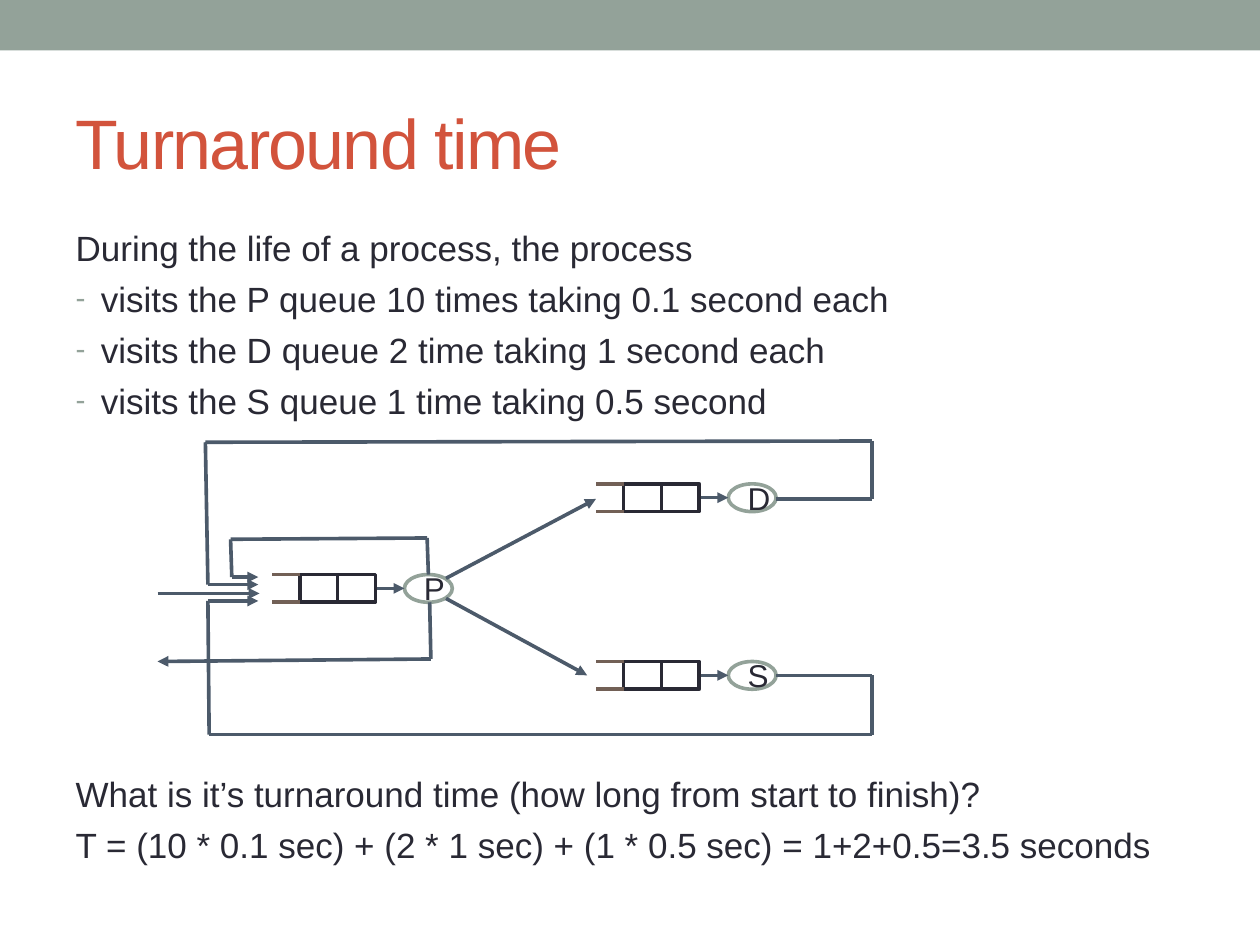
from lxml import etree
from pptx import Presentation
from pptx.dml.color import RGBColor
from pptx.enum.shapes import MSO_CONNECTOR, MSO_SHAPE
from pptx.enum.text import MSO_ANCHOR, MSO_AUTO_SIZE, PP_ALIGN
from pptx.oxml.ns import qn
from pptx.util import Inches, Pt

COLORS = {
    "sage": "93A299",
    "title": "D2533C",
    "ink": "292934",
    "white": "FFFFFF",
    "brown": "726056",
    "slate": "4C5A6A",
}
LINE_WIDTH = Pt(2.08)


def write_text(para, text, size=20, color="ink", align=PP_ALIGN.LEFT, before=0, bullet=None, spacing=None):
    props = para._p.get_or_add_pPr()
    props.set("marL", str(Inches(0.2 if bullet else 0)))
    props.set("indent", str(Inches(-0.2 if bullet else 0)))
    if bullet:
        bullet_color = etree.SubElement(props, qn("a:buClr"))
        etree.SubElement(bullet_color, qn("a:srgbClr"), val=COLORS["sage"])
        etree.SubElement(props, qn("a:buSzPct"), val="85000")
        etree.SubElement(props, qn("a:buFont"), typeface="Arial")
        etree.SubElement(props, qn("a:buChar"), char=bullet)
    else:
        etree.SubElement(props, qn("a:buNone"))
    para.alignment = align
    para.space_before = Pt(before)
    span = para.add_run()
    span.text = text
    span.font.name = "Arial"
    span.font.size = Pt(size)
    span.font.color.rgb = RGBColor.from_string(COLORS[color])
    if spacing:
        span._r.get_or_add_rPr().set("spc", str(spacing))


def draw_line(start, end, color="slate", arrow=False):
    line = page.shapes.add_connector(
        MSO_CONNECTOR.STRAIGHT, *[Inches(value) for value in (*start, *end)]
    )
    line.line.color.rgb = RGBColor.from_string(COLORS[color])
    line.line.width = LINE_WIDTH
    if arrow:
        etree.SubElement(line.line._get_or_add_ln(), qn("a:tailEnd"), type="triangle")
    etree.SubElement(line._element.spPr, qn("a:effectLst"))


deck = Presentation()
deck.slide_width, deck.slide_height = Inches(10), Inches(7.5)
page = deck.slides.add_slide(deck.slide_layouts[1])

band = page.shapes.add_shape(MSO_SHAPE.RECTANGLE, 0, 0, Inches(10), Inches(0.4))
band.shadow.inherit = False
band.fill.solid()
band.fill.fore_color.rgb = RGBColor.from_string(COLORS["sage"])
band.line.fill.background()

title, body = page.placeholders
for holder, top, height, anchor in (
    (title, 0.58, 1.08, MSO_ANCHOR.MIDDLE),
    (body, 1.75, 5.33, MSO_ANCHOR.TOP),
):
    holder.left, holder.top = Inches(0.5), Inches(top)
    holder.width, holder.height = Inches(9), Inches(height)
    holder.text_frame.word_wrap = True
    holder.text_frame.auto_size = MSO_AUTO_SIZE.NONE
    holder.text_frame.vertical_anchor = anchor

write_text(title.text_frame.paragraphs[0], "Turnaround time", size=40, color="title", spacing=-100)

body_lines = [
    ("During the life of a process, the process", 0, None),
    ("visits the P queue 10 times taking 0.1 second each", 5, "-"),
    ("visits the D queue 2 time taking 1 second each", 5, "-"),
    ("visits the S queue 1 time taking 0.5 second", 5, "-"),
    ("What is it’s turnaround time (how long from start to finish)?", 201, None),
    ("T = (10 * 0.1 sec) + (2 * 1 sec) + (1 * 0.5 sec) = 1+2+0.5=3.5 seconds", 5, None),
]
for index, (text, before, bullet) in enumerate(body_lines):
    para = body.text_frame.add_paragraph() if index else body.text_frame.paragraphs[0]
    write_text(para, text, before=before, bullet=bullet)

for label, left, top in (("D", 4.95, 3.84), ("S", 4.95, 5.25), ("P", 2.38, 4.56)):
    for kind, offset, width, outline in (
        (MSO_SHAPE.RECTANGLE, 0, 0.3, "ink"),
        (MSO_SHAPE.RECTANGLE, 0.3, 0.3, "ink"),
        (MSO_SHAPE.OVAL, 0.83, 0.38, "sage"),
    ):
        node = page.shapes.add_shape(
            kind, Inches(left + offset), Inches(top), Inches(width), Inches(0.22)
        )
        node.shadow.inherit = False
        node.fill.solid()
        node.fill.fore_color.rgb = RGBColor.from_string(COLORS["white"])
        node.line.color.rgb = RGBColor.from_string(COLORS[outline])
        node.line.width = LINE_WIDTH
        if kind == MSO_SHAPE.OVAL:
            node.text_frame.word_wrap = True
            node.text_frame.vertical_anchor = MSO_ANCHOR.MIDDLE
            write_text(node.text_frame.paragraphs[0], label, size=18, align=PP_ALIGN.CENTER)
    for edge in (top, top + 0.22):
        draw_line((left, edge), (left - 0.22, edge), color="brown")
    draw_line((left + 0.61, top + 0.11), (left + 0.83, top + 0.11), arrow=True)

routes = [
    [(3.54, 4.59), (4.73, 3.96)],
    [(3.54, 4.75), (4.66, 5.36)],
    [(6.16, 3.96), (6.92, 3.96), (6.92, 3.5), (1.63, 3.51), (1.65, 4.64), (2.05, 4.64)],
    [(6.16, 5.36), (6.92, 5.36), (6.92, 5.83), (1.66, 5.83), (1.65, 4.77), (2.05, 4.77)],
    [(1.25, 4.71), (2.06, 4.71)],
    [(3.4, 4.56), (3.39, 4.27), (1.83, 4.28), (1.84, 4.58), (2.05, 4.58)],
    [(3.41, 4.78), (3.42, 5.23), (1.25, 5.25)],
]
for route in routes:
    for start, end in zip(route, route[1:]):
        draw_line(start, end, arrow=end == route[-1])

deck.save("out.pptx")
